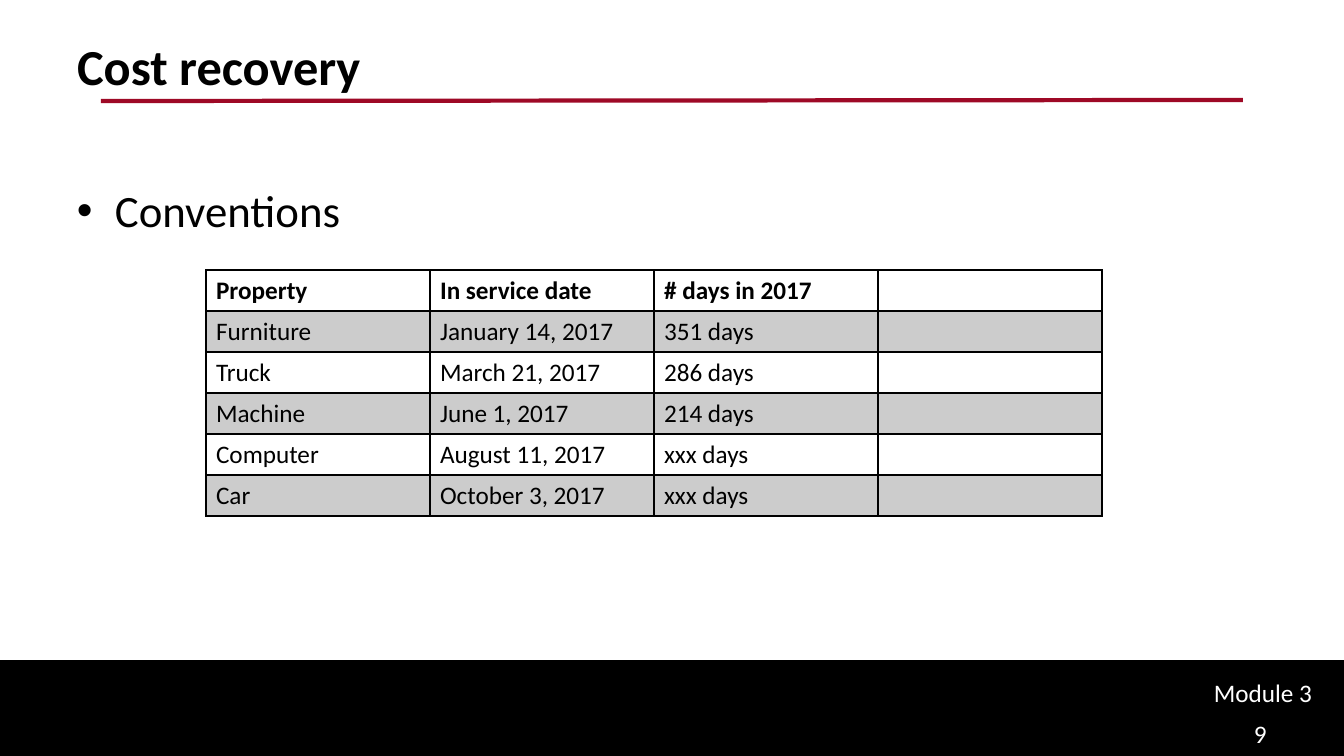
from dataclasses import dataclass

from lxml import etree
from pptx import Presentation
from pptx import util as u
from pptx.dml.color import RGBColor
from pptx.enum import shapes, text
from pptx.oxml import ns


@dataclass(frozen=True)
class Theme:
    font: str = "Calibri"
    ink: str = "000000"
    paper: str = "FFFFFF"
    accent: str = "9E0926"
    band_opacity: int = 20
    title_size: int = 36
    body_size: int = 32
    small_size: int = 18


THEME = Theme()
PAGE_WIDTH, PAGE_HEIGHT = 1344, 756
ROWS = [
    ("Property", "In service date", "# days in 2017", ""),
    ("Furniture", "January 14, 2017", "351 days", ""),
    ("Truck", "March 21, 2017", "286 days", ""),
    ("Machine", "June 1, 2017", "214 days", ""),
    ("Computer", "August 11, 2017", "xxx days", ""),
    ("Car", "October 3, 2017", "xxx days", ""),
]


def px(length):
    return u.Emu(round(length * 914400 / 100.8))


def color(value):
    return RGBColor.from_string(value)


def add_element(parent, tag, **attributes):
    return etree.SubElement(parent, ns.qn(tag), attributes)


def write(frame, words, size, ink=THEME.ink, bold=False):
    para = frame.paragraphs[0]
    para.text = words
    para.alignment = text.PP_ALIGN.LEFT
    para.font.name = THEME.font
    para.font.size = u.Pt(size)
    para.font.bold = bold
    para.font.color.rgb = color(ink)


def add_label(page, box, words, size, ink=THEME.ink):
    frame = page.shapes.add_textbox(*map(px, box)).text_frame
    frame.word_wrap = True
    write(frame, words, size, ink)


def add_heading(page, box, words):
    left, top, width, height = box
    title = page.shapes.title
    title.left, title.top, title.width, title.height = map(px, box)
    frame = title.text_frame
    frame.auto_size = text.MSO_AUTO_SIZE.NONE
    frame.vertical_anchor = text.MSO_ANCHOR.TOP
    write(frame, words, THEME.title_size, bold=True)

    rule = page.shapes.add_connector(
        shapes.MSO_CONNECTOR.STRAIGHT,
        px(left + 34), px(top + 71), px(left + width - 34), px(top + 70))
    rule.line.color.rgb = color(THEME.accent)
    rule.line.width = u.Pt(3)
    add_element(rule._element.spPr, "a:effectLst")


def add_bullet(page, box, words):
    frame = page.shapes.add_textbox(*map(px, box)).text_frame
    frame.word_wrap = True
    indent = px(38)
    properties = frame.paragraphs[0]._p.get_or_add_pPr()
    properties.set("marL", str(indent))
    properties.set("indent", str(-indent))
    add_element(properties, "a:buFont", typeface="Arial")
    add_element(properties, "a:buChar", char="•")
    write(frame, words, THEME.body_size)


def set_borders(cell, widths):
    properties = cell._tc.get_or_add_tcPr()
    for side, width in widths.items():
        line = add_element(properties, f"a:ln{side}", w=str(u.Pt(width)))
        fill = add_element(line, "a:solidFill")
        add_element(fill, "a:srgbClr", val=THEME.ink)


def set_fill(cell, banded):
    cell.fill.solid()
    cell.fill.fore_color.rgb = color(THEME.ink if banded else THEME.paper)
    if banded:
        shade = cell._tc.tcPr.find(ns.qn("a:solidFill"))[0]
        add_element(shade, "a:alpha", val=str(THEME.band_opacity * 1000))


def add_days_table(page, box, rows):
    height = box[3]
    table = page.shapes.add_table(len(rows), len(rows[0]), *map(px, box)).table
    for row_index, values in enumerate(rows):
        table.rows[row_index].height = px(height // len(rows))
        for column_index, words in enumerate(values):
            cell = table.cell(row_index, column_index)
            top = 2 if row_index == 1 else 1
            bottom = 2 if row_index == 0 else 1
            set_borders(cell, {"L": 1, "R": 1, "T": top, "B": bottom})
            set_fill(cell, banded=row_index % 2 == 1)
            write(cell.text_frame, words, THEME.small_size, bold=row_index == 0)


def add_footer(page, box, module, number):
    left, top, width, height = box
    band = page.shapes.add_shape(shapes.MSO_SHAPE.RECTANGLE, *map(px, box))
    band.shadow.inherit = False
    band.fill.solid()
    band.fill.fore_color.rgb = color(THEME.ink)
    band.line.color.rgb = color(THEME.ink)
    band.line.width = u.Pt(2)
    right = left + width
    add_label(page, (right - 140, top + 11, 133, 40), module,
              THEME.small_size, THEME.paper)
    add_label(page, (right - 100, top + 52, 92, 43), number,
              THEME.small_size, THEME.paper)


def main():
    deck = Presentation()
    deck.slide_width, deck.slide_height = px(PAGE_WIDTH), px(PAGE_HEIGHT)
    page = deck.slides.add_slide(deck.slide_layouts[5])
    page.background.fill.solid()
    page.background.fill.fore_color.rgb = color(THEME.paper)
    add_footer(page, (0, 661, PAGE_WIDTH, 95), "Module 3", "9")
    add_heading(page, (67, 30, 1210, 126), "Cost recovery")
    add_bullet(page, (67, 178, 1210, 432), "Conventions")
    add_days_table(page, (206, 270, 896, 246), ROWS)
    deck.save("out.pptx")


if __name__ == "__main__":
    main()
